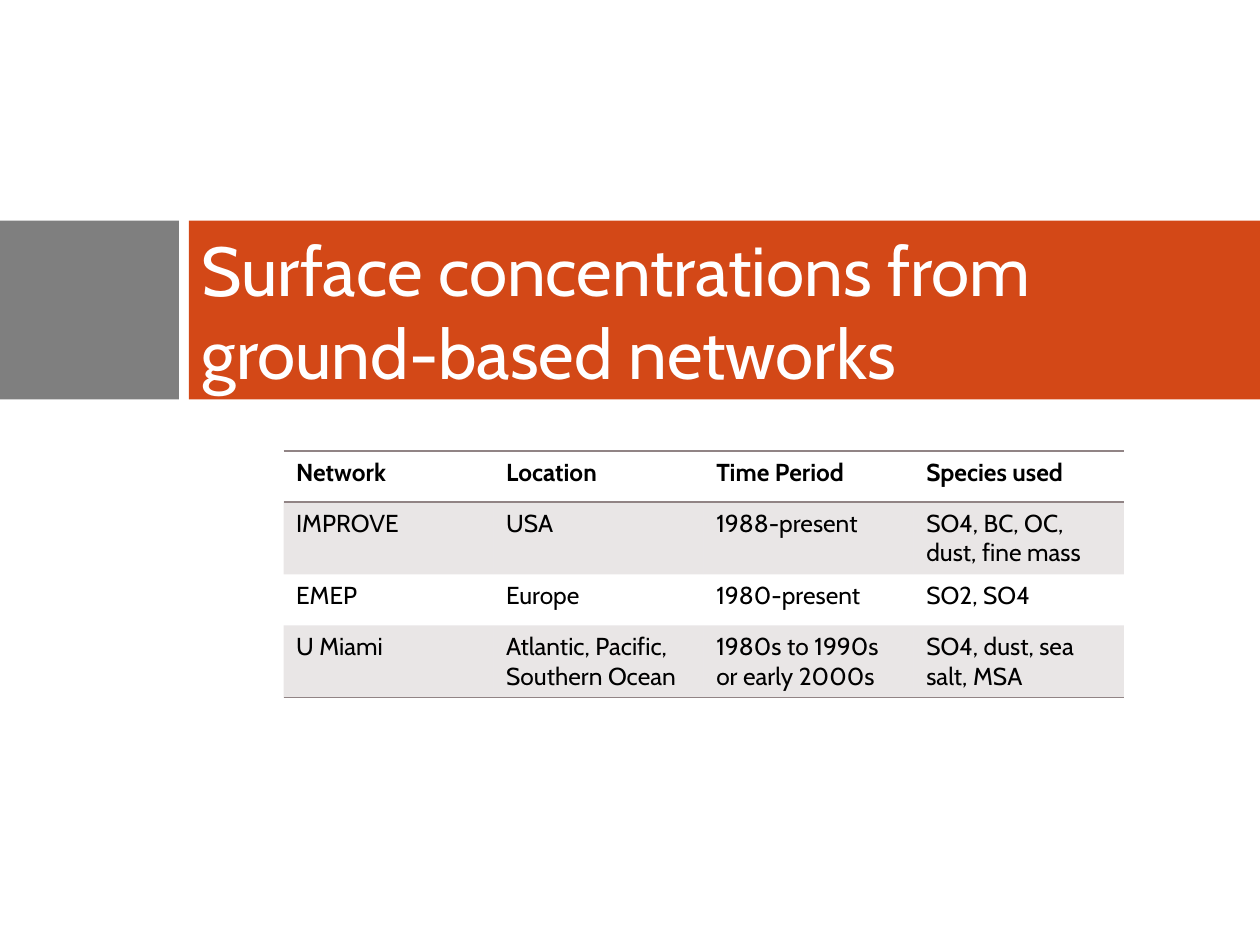
from dataclasses import dataclass

from lxml.etree import SubElement
from pptx import Presentation
from pptx.dml.color import RGBColor
from pptx.enum.shapes import MSO_SHAPE
from pptx.enum.text import MSO_ANCHOR, MSO_AUTO_SIZE, PP_ALIGN
from pptx.oxml import parse_xml
from pptx.oxml.ns import nsdecls, qn
from pptx.util import Inches, Pt

COLORS = {"gray": "7F7F7F", "orange": "D34817", "white": "FFFFFF",
          "black": "000000", "rule": "918485"}
FONT = "Cabin"
PLAIN_STYLE = "{2D5ABB26-0587-4C30-8999-92F81FD0307C}"  # no style, no grid
BAND_ALPHA = 20
TOP, HIGH = 1.75, 1.42

ROWS = [
    ("Network", "Location", "Time Period", "Species used"),
    ("IMPROVE", "USA", "1988-present", "SO4, BC, OC, dust, fine mass"),
    ("EMEP", "Europe", "1980-present", "SO2, SO4"),
    ("U Miami", "Atlantic, Pacific, Southern Ocean",
     "1980s to 1990s or early 2000s", "SO4, dust, sea salt, MSA"),
]


@dataclass
class Bar:
    left: float
    width: float
    color: str


BARS = [Bar(0, 1.42, "gray"), Bar(1.5, 8.5, "orange")]


def rgb(name: str) -> RGBColor:
    return RGBColor.from_string(COLORS[name])


def style(font, color: str, **values) -> None:
    for key, value in {"name": FONT, **values}.items():
        setattr(font, key, value)
    font.color.rgb = rgb(color)


def add_bar(slide, bar: Bar) -> None:
    shape = slide.shapes.add_shape(
        MSO_SHAPE.RECTANGLE, Inches(bar.left), Inches(TOP),
        Inches(bar.width), Inches(HIGH))
    shape.shadow.inherit = False
    shape.fill.solid()
    shape.fill.fore_color.rgb = rgb(bar.color)
    shape.line.fill.background()


def set_title(slide, text: str) -> None:
    title = slide.shapes.title
    box = {"left": 1.5, "top": 1.92, "width": 8.33, "height": 1.08}
    for key, value in box.items():
        setattr(title, key, Inches(value))
    frame = title.text_frame
    frame.text = text
    frame.word_wrap = True
    frame.auto_size = MSO_AUTO_SIZE.NONE
    frame.vertical_anchor = MSO_ANCHOR.MIDDLE
    line = frame.paragraphs[0]
    line.alignment = PP_ALIGN.LEFT
    style(line.runs[0].font, "white", size=Pt(39.6))
    # Bring the title in front of the bars.
    title.element.getparent().append(title.element)


def add_rules(cell, sides: str) -> None:
    """Draw 1 pt borders on the given sides, T before B."""
    props = cell._tc.get_or_add_tcPr()
    for spot, side in enumerate(sides):
        props.insert(spot, parse_xml(
            f'<a:ln{side} {nsdecls("a")} w="12700"><a:solidFill>'
            f'<a:srgbClr val="{COLORS["rule"]}"/>'
            f'</a:solidFill></a:ln{side}>'))


def fill_cell(cell, band: bool) -> None:
    if not band:
        cell.fill.background()
        return
    cell.fill.solid()
    cell.fill.fore_color.rgb = rgb("rule")
    tint = cell._tc.tcPr.find(".//" + qn("a:srgbClr"))
    SubElement(tint, qn("a:alpha"), val=str(BAND_ALPHA * 1000))


def add_grid(slide) -> None:
    high = 0.405
    table = slide.shapes.add_table(
        len(ROWS), len(ROWS[0]), Inches(2.25), Inches(3.58),
        Inches(6.67), Inches(high * len(ROWS))).table
    table._tbl.tblPr.find(qn("a:tableStyleId")).text = PLAIN_STYLE
    rules = {0: "TB", len(ROWS) - 1: "B"}
    for r, row in enumerate(ROWS):
        for c, text in enumerate(row):
            cell = table.cell(r, c)
            cell.text = text
            run = cell.text_frame.paragraphs[0].runs[0]
            style(run.font, "black", size=Pt(14), bold=r == 0)
            fill_cell(cell, band=r % 2 == 1)
            add_rules(cell, rules.get(r, ""))


def main() -> None:
    deck = Presentation()
    deck.slide_width, deck.slide_height = Inches(10), Inches(7.5)
    slide = deck.slides.add_slide(deck.slide_layouts[5])
    for bar in BARS:
        add_bar(slide, bar)
    set_title(slide, "Surface concentrations from ground-based networks")
    add_grid(slide)
    deck.save("out.pptx")


if __name__ == "__main__":
    main()
